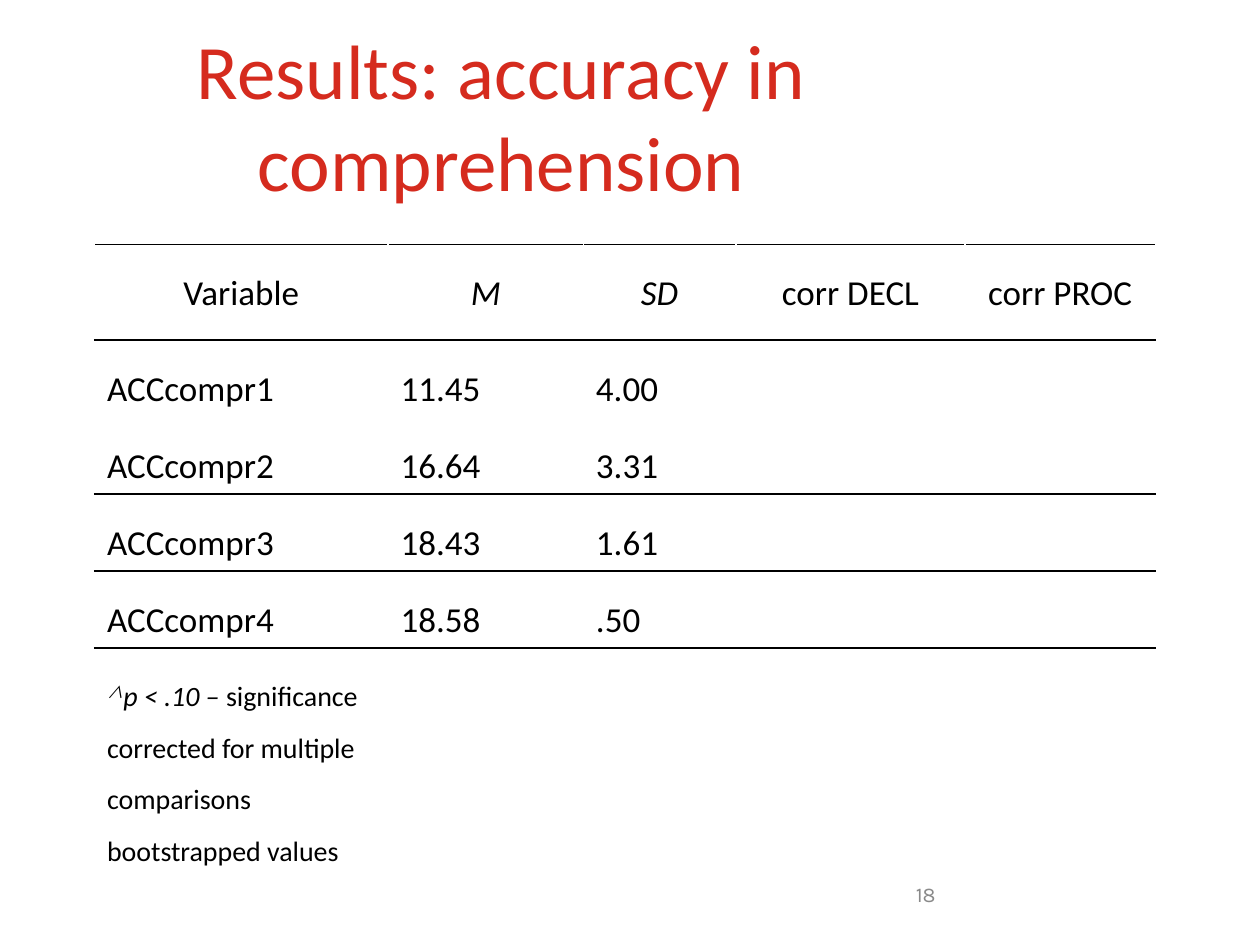
import pptx
import pptx.util
import pptx.dml.color
import pptx.enum.text
import pptx.oxml.ns
import lxml.etree

Inches, Pt = pptx.util.Inches, pptx.util.Pt
ALIGN = pptx.enum.text.PP_ALIGN

INK = {"red": "D52B1E", "black": "000000", "white": "FFFFFF", "gray": "898989"}
FONT = "Calibri"

TITLE = "Results: accuracy in comprehension"
PAGE = "18"
HEAD = ["Variable", "M", "SD", "corr DECL", "corr PROC"]
SLANT = {"M", "SD"}
ROWS = [
    ["ACCcompr1", "11.45", "4.00"],
    ["ACCcompr2", "16.64", "3.31"],
    ["ACCcompr3", "18.43", "1.61"],
    ["ACCcompr4", "18.58", ".50"],
]
NOTE = [
    [
        ("∧", {"font": "Noto Sans CJK JP", "slant": True, "lift": 30000}),
        ("p < .10 – ", {"slant": True}),
        ("significance corrected for multiple comparisons", {}),
    ],
    [("bootstrapped values", {})],
]
WIDTHS = [2.33, 1.55, 1.21, 1.82, 1.51]
HEIGHTS = [0.76, 0.6, 0.6, 0.6, 0.6, 0.55]
SIDES = {"L": "white", "R": "white"}
RULED = {**SIDES, "T": "black", "B": "black"}
EDGES = [
    RULED,
    {**SIDES, "T": "black", "B": "white"},
    {**SIDES, "T": "white", "B": "black"},
    RULED,
    RULED,
    {"T": "black"},
]


def add_run(par, text, size, ink="black", font=FONT, slant=False, lift=0):
    run = par.add_run()
    run.text = text
    run.font.size = Pt(size)
    run.font.name = font
    run.font.italic = slant
    run.font.color.rgb = pptx.dml.color.RGBColor.from_string(INK[ink])
    if lift:
        props = run.font._element
        props.set("baseline", str(lift))
        east = lxml.etree.SubElement(props, pptx.oxml.ns.qn("a:ea"))
        east.set("typeface", font)


def add_text(slide, text, box, size, ink, font=FONT, align=ALIGN.LEFT):
    frame = slide.shapes.add_textbox(*map(Inches, box)).text_frame
    frame.word_wrap = True
    par = frame.paragraphs[0]
    par.alignment = align
    add_run(par, text, size, ink, font)


def set_edges(cell, edges):
    props = cell._tc.get_or_add_tcPr()
    for spot, side in enumerate("LRTB"):
        line = lxml.etree.Element(pptx.oxml.ns.qn("a:ln" + side), w=str(Pt(1)))
        if side in edges:
            fill = lxml.etree.SubElement(line, pptx.oxml.ns.qn("a:solidFill"))
            tint = lxml.etree.SubElement(fill, pptx.oxml.ns.qn("a:srgbClr"))
            tint.set("val", INK[edges[side]])
        else:
            lxml.etree.SubElement(line, pptx.oxml.ns.qn("a:noFill"))
        props.insert(spot, line)


def fill_cell(cell, pars, size, align):
    frame = cell.text_frame
    for num, runs in enumerate(pars):
        par = frame.add_paragraph() if num else frame.paragraphs[0]
        par.alignment = align
        par.line_spacing = 1.5
        for text, style in runs:
            add_run(par, text, size, **style)


def add_grid(slide):
    box = map(Inches, (0.75, 1.94, sum(WIDTHS), sum(HEIGHTS)))
    grid = slide.shapes.add_table(len(HEIGHTS), len(WIDTHS), *box).table
    grid.first_row = grid.horz_banding = False
    for col, width in zip(grid.columns, WIDTHS):
        col.width = Inches(width)
    for row, height, edges in zip(grid.rows, HEIGHTS, EDGES):
        row.height = Inches(height)
        for cell in row.cells:
            cell.fill.background()
            set_edges(cell, edges)
    for col, text in enumerate(HEAD):
        style = {"slant": text in SLANT}
        fill_cell(grid.cell(0, col), [[(text, style)]], 20, ALIGN.CENTER)
    for row, texts in enumerate(ROWS, 1):
        for col, text in enumerate(texts):
            fill_cell(grid.cell(row, col), [[(text, {})]], 20, ALIGN.LEFT)
    fill_cell(grid.cell(len(ROWS) + 1, 0), NOTE, 16, ALIGN.LEFT)


def main():
    deck = pptx.Presentation()
    deck.slide_width, deck.slide_height = Inches(10), Inches(7.5)
    slide = deck.slides.add_slide(deck.slide_layouts[6])
    add_grid(slide)
    add_text(slide, PAGE, (7.17, 6.95, 2.33, 0.4), 12, "gray", "Karla")
    add_text(slide, TITLE, (0.28, 0.13, 7.4, 1.26), 44, "red", align=ALIGN.CENTER)
    deck.save("out.pptx")


if __name__ == "__main__":
    main()
